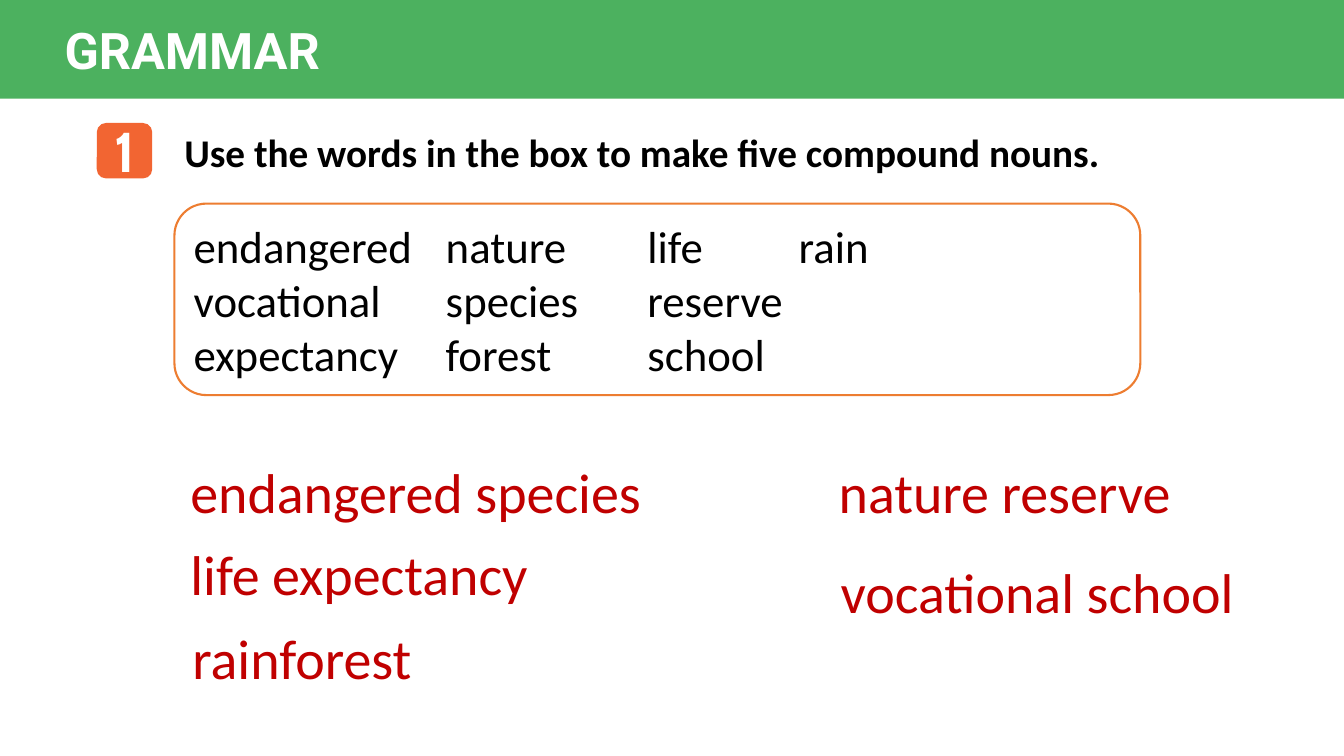
from pptx import Presentation
from pptx.dml.color import RGBColor
from pptx.enum.shapes import MSO_SHAPE
from pptx.enum.text import MSO_ANCHOR, MSO_AUTO_SIZE, PP_ALIGN
from pptx.util import Pt

SCALE = 9144
GREEN = RGBColor(0x4C, 0xB1, 0x5F)
ORANGE = RGBColor(0xF2, 0x65, 0x32)
BORDER = RGBColor(0xED, 0x7D, 0x31)
RED = RGBColor(0xC0, 0x00, 0x00)
BLACK = RGBColor(0x00, 0x00, 0x00)
WHITE = RGBColor(0xFF, 0xFF, 0xFF)


class Page:
    font = "Calibri"

    def __init__(self, deck):
        self.slide = deck.slides.add_slide(deck.slide_layouts[5])
        self.shapes = self.slide.shapes

    def label(self, shape, lines, size, color, bold=False, font=None,
              align=PP_ALIGN.LEFT, anchor=MSO_ANCHOR.TOP):
        frame = shape.text_frame
        frame.word_wrap = True
        frame.auto_size = MSO_AUTO_SIZE.NONE
        frame.vertical_anchor = anchor
        frame.text = "\n".join(lines)
        for para in frame.paragraphs:
            para.alignment = align
            para.font.name = font or self.font
            para.font.size = Pt(size)
            para.font.bold = bold
            para.font.color.rgb = color
        return shape

    def text(self, box, line, size, color, **style):
        shape = self.shapes.add_textbox(*(n * SCALE for n in box))
        return self.label(shape, [line], size, color, **style)

    def block(self, kind, box, fill, line=None):
        shape = self.shapes.add_shape(kind, *(n * SCALE for n in box))
        shape.shadow.inherit = False
        shape.fill.solid()
        shape.fill.fore_color.rgb = fill
        if line is None:
            shape.line.fill.background()
        else:
            shape.line.color.rgb = line
            shape.line.width = Pt(1.5)
        return shape

    def title(self, box, line, below):
        shape = self.shapes.title
        shape.left, shape.top, shape.width, shape.height = (
            n * SCALE for n in box)
        self.label(shape, [line], 36, WHITE, bold=True, font="Roboto")
        below.element.addnext(shape.element)


def main():
    deck = Presentation()
    deck.slide_width = 1333 * SCALE
    deck.slide_height = 750 * SCALE
    page = Page(deck)

    page.block(MSO_SHAPE.ROUNDED_RECTANGLE, (96, 122, 55, 55), ORANGE)
    page.text((99, 111, 49, 77), "1", 40, WHITE, bold=True, font="Cabin",
              align=PP_ALIGN.CENTER)
    page.text((173, 122, 1085, 57),
              "Use the words in the box to make five compound nouns.",
              28, BLACK, bold=True)

    banner = page.block(MSO_SHAPE.RECTANGLE, (0, 0, 1333, 98), GREEN)
    page.title((54, 14, 500, 71), "GRAMMAR", banner)

    school = page.text((824, 515, 412, 101), "vocational school", 40, RED,
                       align=PP_ALIGN.JUSTIFY)
    para = school.text_frame.paragraphs[0]
    para.line_spacing = 1.5
    para.space_before = Pt(6)

    for left, top, width, noun in (
        (179, 449, 476, "endangered species"),
        (179, 530, 362, "life expectancy"),
        (181, 614, 243, "rainforest"),
        (822, 449, 386, "nature reserve"),
    ):
        page.text((left, top, width, 77), noun, 40, RED)

    bank = page.block(MSO_SHAPE.ROUNDED_RECTANGLE, (173, 202, 958, 190),
                      WHITE, BORDER)
    page.label(bank, ["endangered\tnature\t\tlife\t\train",
                      "vocational\t\tspecies\t\treserve",
                      "expectancy\tforest\t\tschool"],
               32, BLACK, anchor=MSO_ANCHOR.MIDDLE)

    deck.save("out.pptx")


if __name__ == "__main__":
    main()
